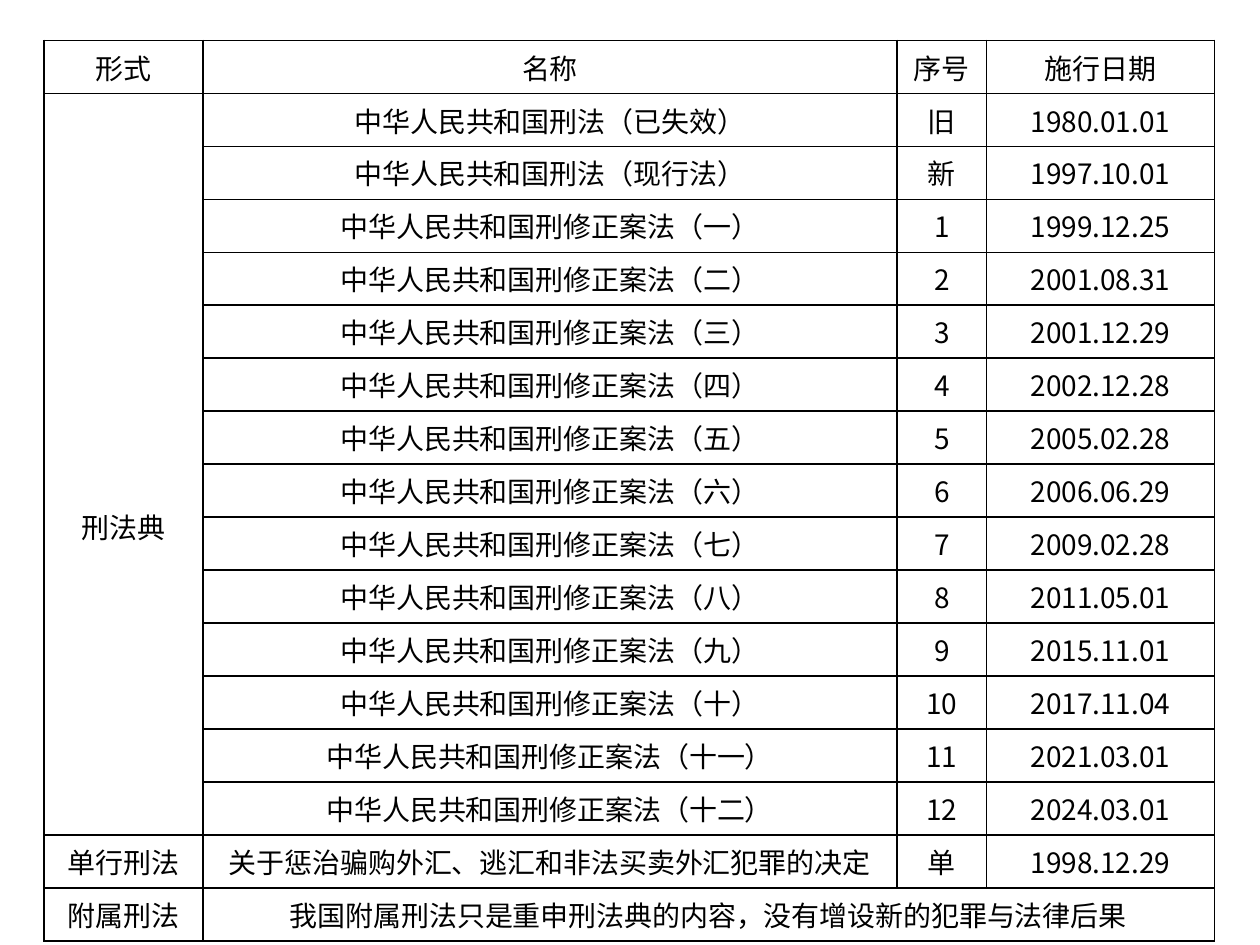
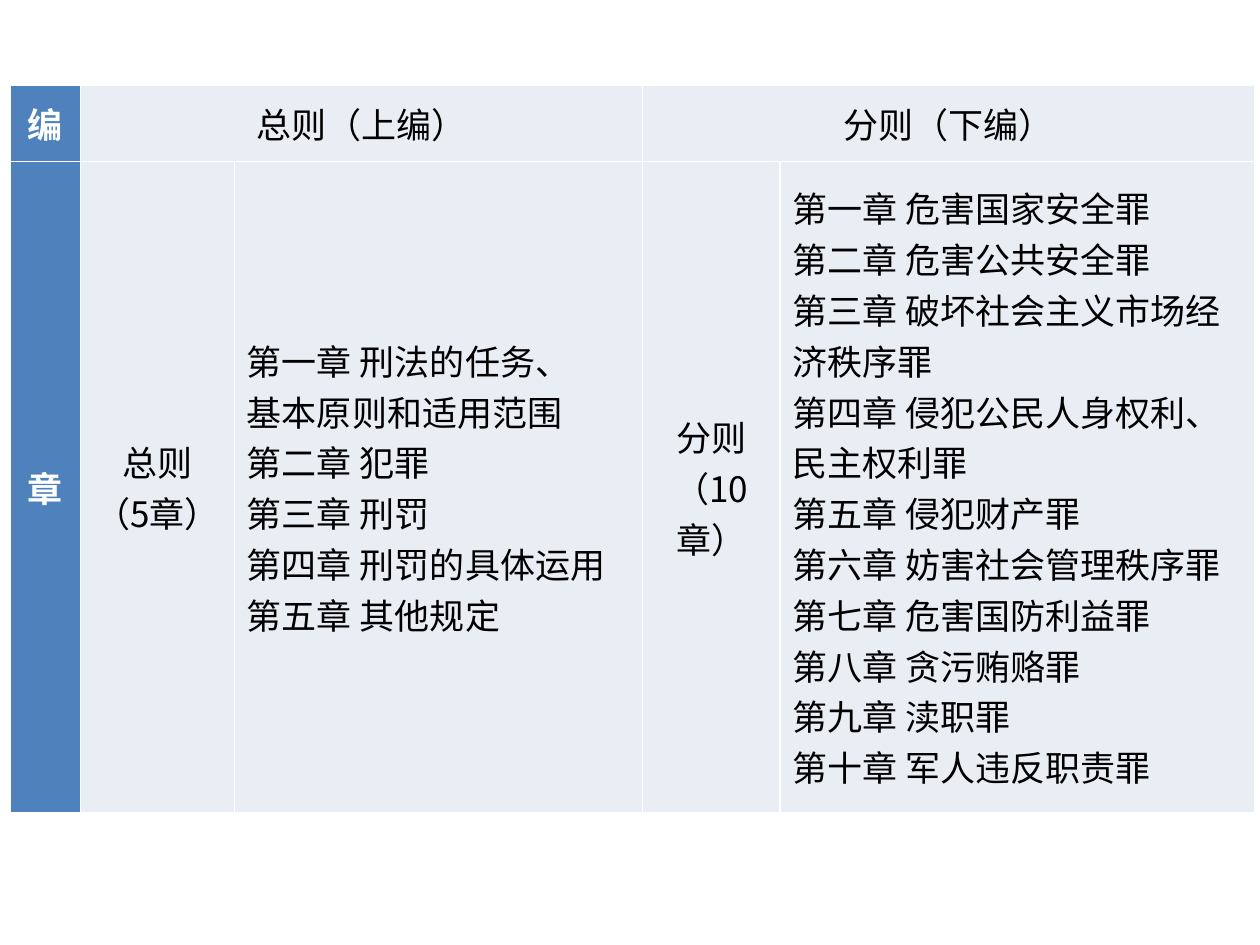
from lxml import etree
from pptx import Presentation
from pptx import util as u
from pptx.dml.color import RGBColor
from pptx.enum import text
from pptx.oxml.ns import qn

INK, WHITE, BLUE, PALE = "000000", "FFFFFF", "4F81BD", "E9EDF4"
FONT = "Noto Sans CJK SC"
MID, LEFT = text.PP_ALIGN.CENTER, text.PP_ALIGN.LEFT


def paint(hue):
    return RGBColor.from_string(hue)


class Deck:
    """Holds the shared table style and the current slide."""

    def __init__(self):
        self.show = Presentation()
        self.show.slide_width = u.Inches(10)
        self.show.slide_height = u.Inches(7.5)

    def page(self):
        self.slide = self.show.slides.add_slide(self.show.slide_layouts[6])
        self.slide.background.fill.solid()
        self.slide.background.fill.fore_color.rgb = paint(WHITE)

    def grid(self, left, top, cols, rows, edge):
        frame = self.slide.shapes.add_table(
            len(rows), len(cols), u.Inches(left), u.Inches(top),
            u.Inches(sum(cols)), u.Inches(sum(rows)))
        table = frame.table
        table.first_row = table.horz_banding = False
        for col, wide in zip(table.columns, cols):
            col.width = u.Inches(wide)
        for row, high in zip(table.rows, rows):
            row.height = u.Inches(high)
        for cell in table.iter_cells():
            self.edges(cell, edge)
            cell.fill.background()
        return table

    def edges(self, cell, hue):
        props = cell._tc.get_or_add_tcPr()
        for side in ("a:lnL", "a:lnR", "a:lnT", "a:lnB"):
            line = etree.SubElement(props, qn(side), w=str(u.Pt(1)))
            fill = etree.SubElement(line, qn("a:solidFill"))
            etree.SubElement(fill, qn("a:srgbClr"), val=hue)

    def label(self, cell, words, size, hue=INK, bold=False, align=MID, fill=None):
        cell.vertical_anchor = text.MSO_ANCHOR.MIDDLE
        if fill:
            cell.fill.solid()
            cell.fill.fore_color.rgb = paint(fill)
        cell.text_frame.text = words
        for para in cell.text_frame.paragraphs:
            para.alignment = align
            for run in para.runs:
                font = run.font
                font.size, font.bold, font.name = u.Pt(size), bold, FONT
                font.color.rgb = paint(hue)
                etree.SubElement(run._r.get_or_add_rPr(), qn("a:ea"), typeface=FONT)


def laws(deck):
    deck.page()
    dates = ["1999.12.25", "2001.08.31", "2001.12.29", "2002.12.28",
             "2005.02.28", "2006.06.29", "2009.02.28", "2011.05.01",
             "2015.11.01", "2017.11.04", "2021.03.01", "2024.03.01"]
    marks = "一 二 三 四 五 六 七 八 九 十 十一 十二".split()
    rows = [("形式", "名称", "序号", "施行日期"),
            ("刑法典", "中华人民共和国刑法（已失效）", "旧", "1980.01.01"),
            ("", "中华人民共和国刑法（现行法）", "新", "1997.10.01")]
    rows += [("", f"中华人民共和国刑修正案法（{mark}）", str(num), date)
             for num, (mark, date) in enumerate(zip(marks, dates), 1)]
    rows += [("单行刑法", "关于惩治骗购外汇、逃汇和非法买卖外汇犯罪的决定", "单", "1998.12.29"),
             ("附属刑法", "我国附属刑法只是重申刑法典的内容，没有增设新的犯罪与法律后果", "", "")]
    table = deck.grid(0.35, 0.32, [1.26, 5.51, 0.71, 1.81], [0.42] * len(rows), INK)
    last = len(rows) - 1
    code = table.cell(1, 0)
    code.merge(table.cell(last - 2, 0))
    table.cell(last, 1).merge(table.cell(last, 3))
    for r, row in enumerate(rows):
        for c, words in enumerate(row):
            if words:
                deck.label(table.cell(r, c), words, 16)
    code.margin_top = u.Inches(1.03)


def parts(deck):
    deck.page()
    table = deck.grid(0.08, 0.68, [0.56, 1.22, 3.24, 1.09, 3.77], [0.6, 5.17], WHITE)
    for c in (1, 3):
        table.cell(0, c).merge(table.cell(0, c + 1))
    for r, words in enumerate("编章"):
        deck.label(table.cell(r, 0), words, 20, WHITE, True, fill=BLUE)
    general = ["第一章 刑法的任务、", "基本原则和适用范围", "第二章 犯罪",
               "第三章 刑罚", "第四章 刑罚的具体运用", "第五章 其他规定"]
    crimes = ["危害国家安全罪", "危害公共安全罪", "破坏社会主义市场经济秩序罪",
              "侵犯公民人身权利、民主权利罪", "侵犯财产罪", "妨害社会管理秩序罪",
              "危害国防利益罪", "贪污贿赂罪", "渎职罪", "军人违反职责罪"]
    special = [f"第{num}章 {crime}" for num, crime in zip("一二三四五六七八九十", crimes)]
    cells = [(0, 1, "总则（上编）", MID), (0, 3, "分则（下编）", MID),
             (1, 1, "总则\n（5章）", MID), (1, 2, "\n".join(general), LEFT),
             (1, 3, "分则\n（10章）", MID), (1, 4, "\n".join(special), LEFT)]
    for r, c, words, align in cells:
        deck.label(table.cell(r, c), words, 20, align=align, fill=PALE)


def main():
    deck = Deck()
    laws(deck)
    parts(deck)
    deck.show.save("out.pptx")


if __name__ == "__main__":
    main()
